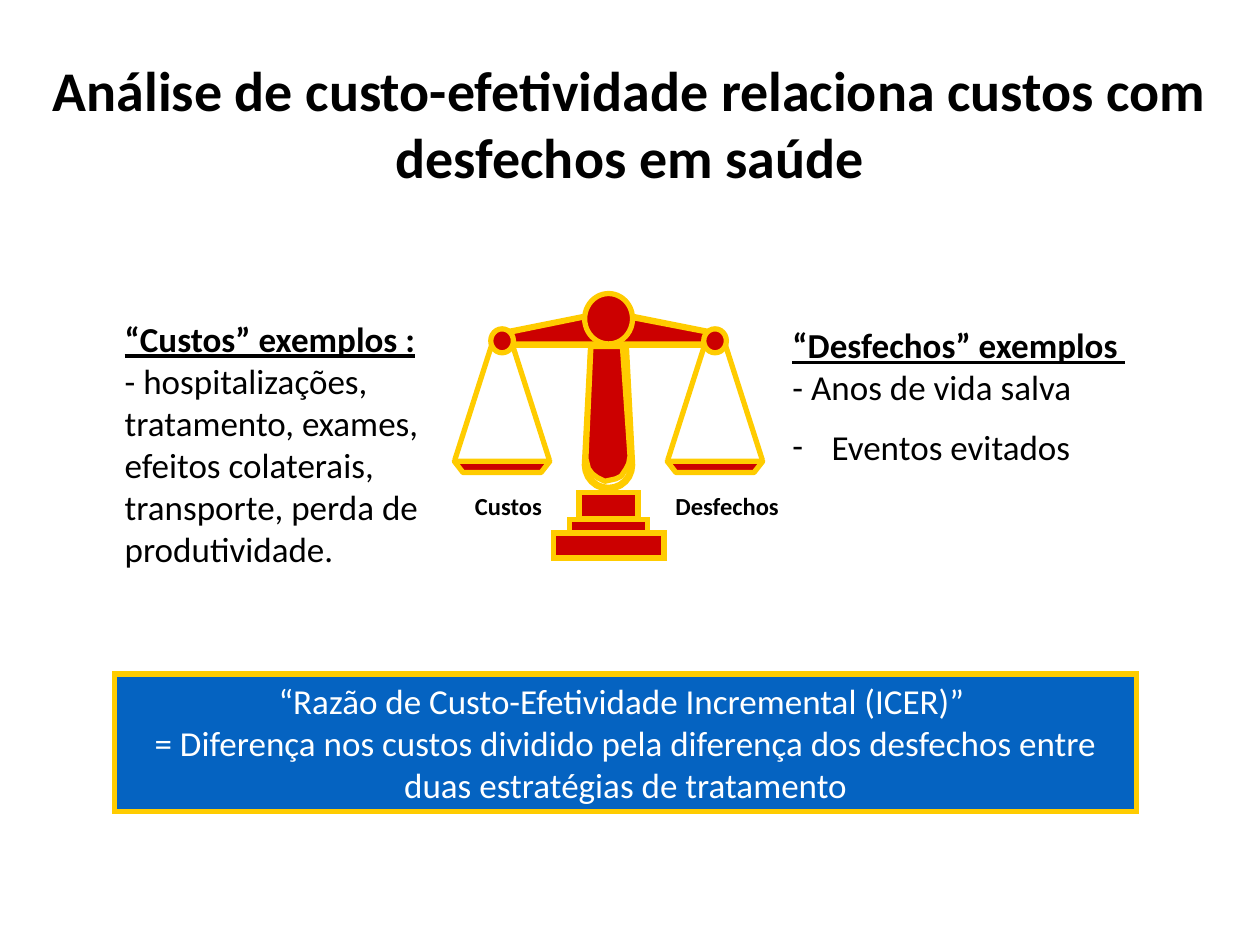
import math
from dataclasses import dataclass

from lxml import etree
from pptx import Presentation
from pptx import util as u
from pptx.dml.color import RGBColor
from pptx.enum import shapes, text
from pptx.oxml.ns import qn


@dataclass(frozen=True)
class Theme:
    font: str = "Calibri"
    ink: str = "000000"
    light: str = "FFFFFF"
    banner: str = "0563C1"
    red: str = "CC0000"
    gold: str = "FFCC00"
    title: int = 32
    body: int = 20
    label: int = 14
    outline: int = 3
    rail: int = 4


THEME = Theme()
COLUMNS, ROWS = 100, 75
CELL = u.Inches(0.1)
SLIM = (0.08, 0.04)
BEAM_CENTRE = 48.3
PAN_OFFSET = 8.45


def cells(*counts):
    """Turn grid counts into slide lengths."""
    return [round(count * CELL) for count in counts]


def paint(shape, fill=THEME.red, width=THEME.outline):
    shape.shadow.inherit = False
    if fill:
        shape.fill.solid()
        shape.fill.fore_color.rgb = RGBColor.from_string(fill)
    else:
        shape.fill.background()
    shape.line.color.rgb = RGBColor.from_string(THEME.gold)
    shape.line.width = u.Pt(width)


def add_preset(slide, kind, box, **look):
    """Add a preset shape with sharp corners."""
    shape = slide.shapes.add_shape(kind, *cells(*box))
    paint(shape, **look)
    outline = shape._element.spPr.find(qn("a:ln"))
    etree.SubElement(outline, qn("a:miter"), lim="800000")
    return shape


def add_outline(slide, points, **look):
    start, *rest = [cells(*point) for point in points]
    builder = slide.shapes.build_freeform(*start)
    builder.add_line_segments(rest, close=True)
    paint(builder.convert_to_shape(), **look)


def add_line(slide, start, end):
    line = slide.shapes.add_connector(
        shapes.MSO_CONNECTOR.STRAIGHT, *cells(*start, *end))
    line.line.color.rgb = RGBColor.from_string(THEME.gold)
    line.line.width = u.Pt(THEME.outline)
    etree.SubElement(line._element.spPr, qn("a:effectLst"))


def set_dash(paragraph, indent=0.31):
    properties = paragraph._p.get_or_add_pPr()
    properties.set("marL", str(u.Inches(indent)))
    properties.set("indent", str(-u.Inches(indent)))
    etree.SubElement(properties, qn("a:buFont"), typeface=THEME.font)
    etree.SubElement(properties, qn("a:buChar"), char="-")


def write(frame, lines, size=THEME.body, color=THEME.ink, bold=False,
          heading=False, align=text.PP_ALIGN.LEFT, insets=SLIM, bullets=()):
    """Fill a frame with one paragraph of lines, then dashed bullets."""
    frame.word_wrap = True
    frame.auto_size = text.MSO_AUTO_SIZE.SHAPE_TO_FIT_TEXT
    frame.vertical_anchor = text.MSO_ANCHOR.TOP
    frame.margin_left = frame.margin_right = u.Inches(insets[0])
    frame.margin_top = frame.margin_bottom = u.Inches(insets[1])

    def add_run(paragraph, words, strong, underline=False):
        run = paragraph.add_run()
        run.text = words
        run.font.name = THEME.font
        run.font.size = u.Pt(size)
        run.font.bold = strong
        run.font.underline = underline
        run.font.color.rgb = RGBColor.from_string(color)

    paragraph = frame.paragraphs[0]
    paragraph.alignment = align
    for index, line in enumerate(lines):
        if index:
            paragraph.add_line_break()
        is_heading = heading and index == 0
        add_run(paragraph, line, bold or is_heading, is_heading)
    for bullet in bullets:
        paragraph = frame.add_paragraph()
        paragraph.space_before = u.Pt(size / 2)
        set_dash(paragraph)
        add_run(paragraph, bullet, bold)


def add_text(slide, box, lines, **style):
    write(slide.shapes.add_textbox(*cells(*box)).text_frame, lines, **style)


def add_column(slide):
    """Rounded rail, stepped base and shaft that carry the beam."""
    radius, bend = 1.85, 36.9
    arc = [(BEAM_CENTRE + radius * math.cos(math.radians(angle)),
            bend + radius * math.sin(math.radians(angle)))
           for angle in range(0, 181, 15)]
    add_outline(slide, [(BEAM_CENTRE + 1.35, 27.4), *arc,
                        (BEAM_CENTRE - 1.35, 27.4)],
                fill=None, width=THEME.rail)
    top = 39.1
    for width, height in ((4.7, 2.1), (6.2, 1.1), (8.8, 2)):
        add_preset(slide, shapes.MSO_SHAPE.RECTANGLE,
                   (BEAM_CENTRE - width / 2, top, width, height))
        top += height
    add_outline(slide, [
        (46.9, 27.5), (49.4, 27.5), (50, 36.2), (49.9, 36.8), (49.7, 37.2),
        (49.3, 37.8), (48.9, 38), (48, 38.2), (47.4, 37.9), (47, 37.6),
        (46.7, 37.2), (46.5, 36.4)])


def add_beam(slide):
    for side in (-1, 1):
        add_line(slide, (BEAM_CENTRE + side * 1.9, 25.1),
                 (BEAM_CENTRE + side * 7.9, 26.3))
    add_line(slide, (40.9, 27.4), (56.1, 27.4))
    add_outline(slide, [(48.1, 24.8), (39.8, 26.5), (39.9, 27.3),
                        (56.9, 27.3), (56.9, 26.5)])
    add_preset(slide, shapes.MSO_SHAPE.OVAL,
               (BEAM_CENTRE - 1.9, 23.3, 3.8, 4))


def add_pan(slide, centre):
    add_outline(slide, [(centre - 3.8, 36.6), (centre + 3.8, 36.6),
                        (centre + 3.1, 37.5), (centre - 3.1, 37.5)])
    for side in (-1, 1):
        add_line(slide, (centre + side * 0.8, 27.3),
                 (centre + side * 3.75, 36.5))
    add_preset(slide, shapes.MSO_SHAPE.OVAL, (centre - 0.9, 26.1, 1.8, 1.9))


def add_scale(slide):
    add_column(slide)
    add_beam(slide)
    for side in (1, -1):
        add_pan(slide, BEAM_CENTRE + side * PAN_OFFSET)
    for left, width, label in ((36.9, 7.6, "Custos"),
                               (52.8, 10.6, "Desfechos")):
        add_text(slide, (left, 38.6, width, 3.1), [label],
                 size=THEME.label, bold=True)


def add_ratio_banner(slide):
    banner = add_preset(slide, shapes.MSO_SHAPE.RECTANGLE,
                        (9.1, 53.5, 81.1, 10.9), fill=THEME.banner)
    write(banner.text_frame, [
        "“Razão de Custo-Efetividade Incremental (ICER)” ",
        "= Diferença nos custos dividido pela diferença dos desfechos "
        "entre duas estratégias de tratamento",
    ], color=THEME.light, align=text.PP_ALIGN.CENTER)


def main():
    presentation = Presentation()
    presentation.slide_width, presentation.slide_height = cells(COLUMNS, ROWS)
    slide = presentation.slides.add_slide(presentation.slide_layouts[6])
    add_text(slide, (0, 3.9, COLUMNS, 11.8),
             ["Análise de custo-efetividade relaciona custos com "
              "desfechos em saúde"],
             size=THEME.title, bold=True, align=text.PP_ALIGN.CENTER,
             insets=(0.1, 0.05))
    add_text(slide, (9.1, 24.8, 26.3, 21),
             ["“Custos” exemplos :",
              "- hospitalizações, tratamento, exames, efeitos colaterais, "
              "transporte, perda de produtividade."], heading=True)
    add_text(slide, (62.1, 25.3, 30.4, 12.5),
             ["“Desfechos” exemplos ", "- Anos de vida salva"],
             heading=True, bullets=["Eventos evitados"])
    add_scale(slide)
    add_ratio_banner(slide)
    presentation.save("out.pptx")


if __name__ == "__main__":
    main()
